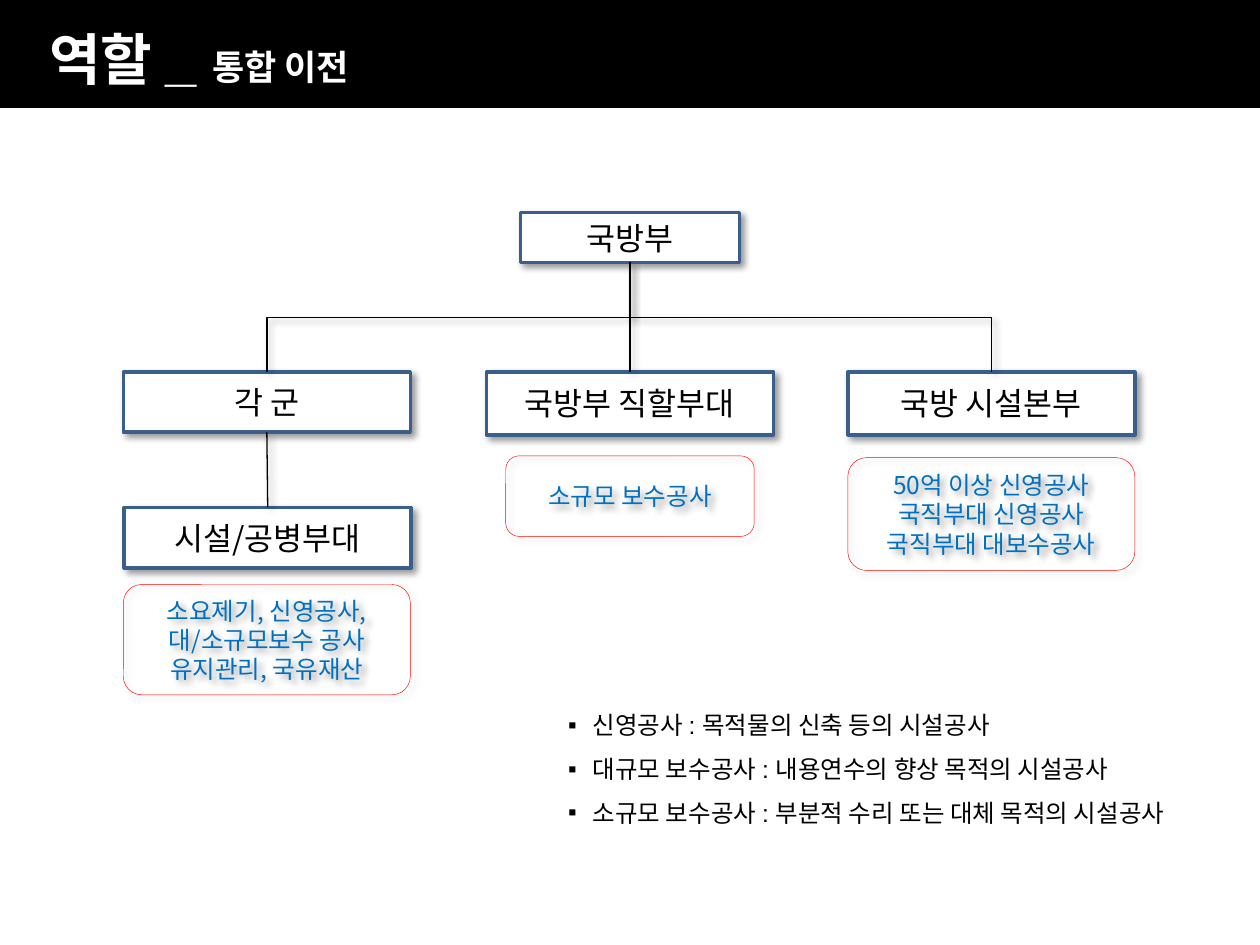
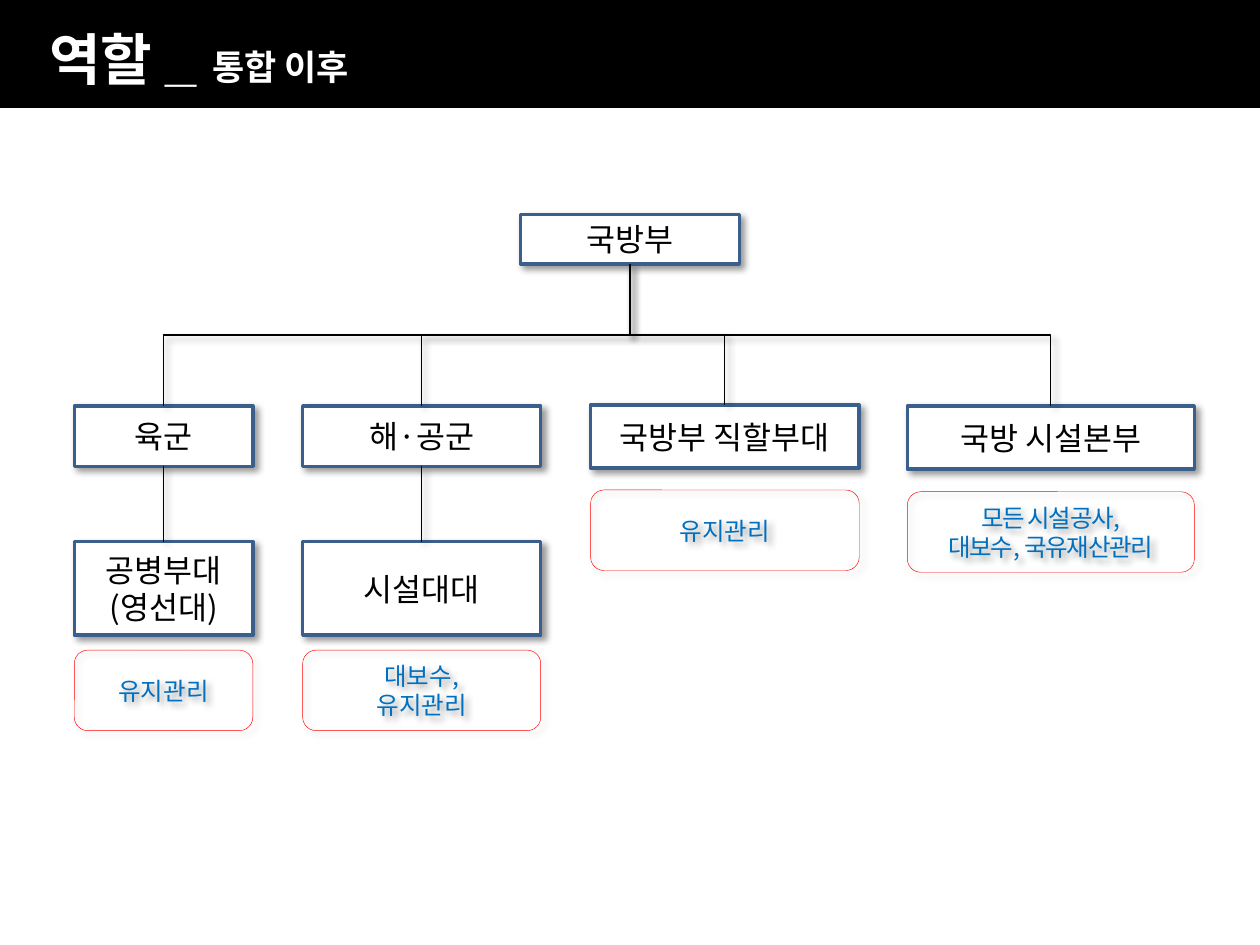
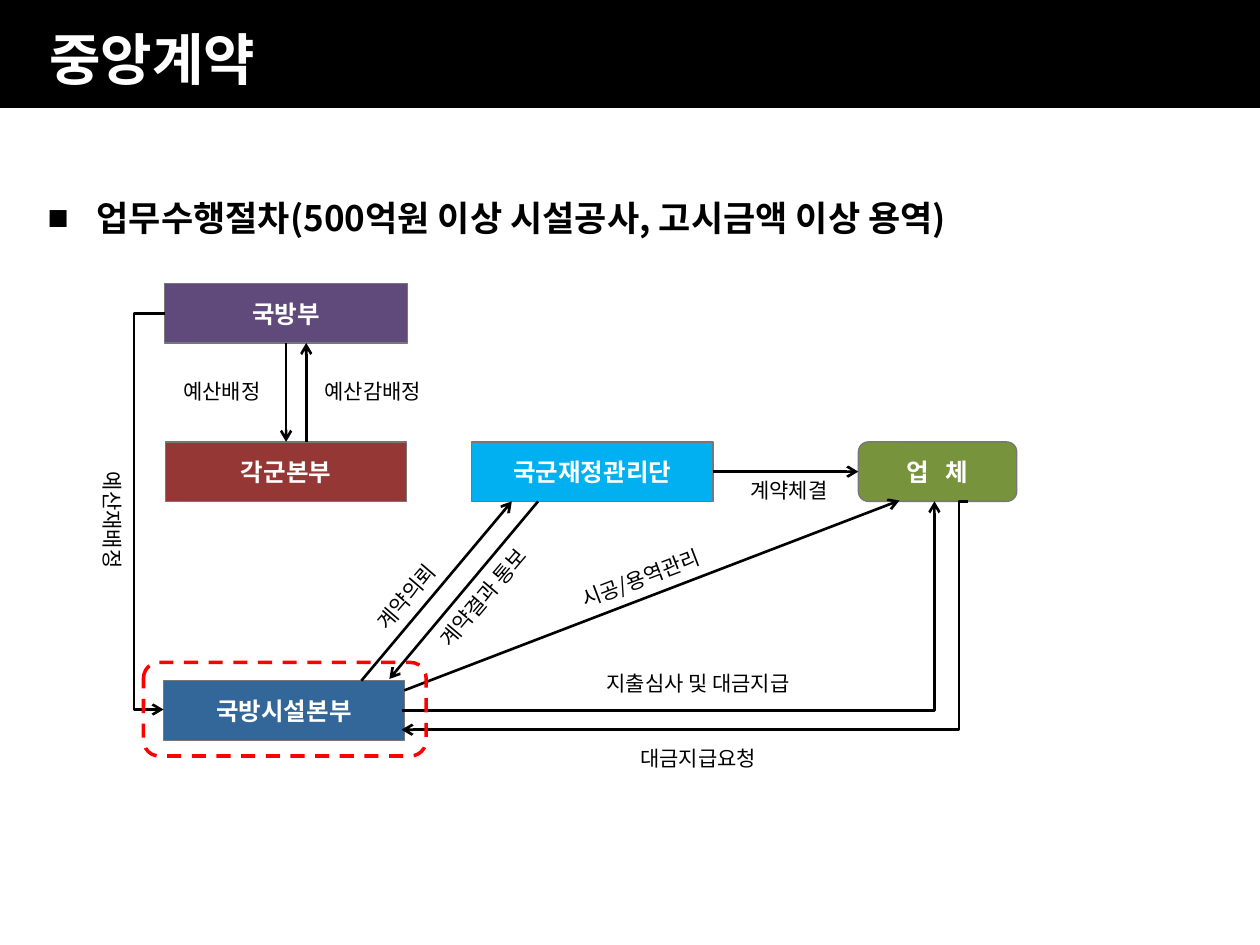
from dataclasses import dataclass

from lxml.etree import SubElement as Sub
from pptx import Presentation
from pptx.dml.color import RGBColor
from pptx.enum.dml import MSO_LINE
from pptx.enum.shapes import MSO_CONNECTOR as Conn, MSO_SHAPE as Geo
from pptx.enum.text import MSO_ANCHOR as Anchor, MSO_AUTO_SIZE as Auto, PP_ALIGN as Align
from pptx.oxml.ns import qn
from pptx.util import Pt

# Shared look
BLACK = RGBColor(0, 0, 0)
WHITE = RGBColor(0xFF, 0xFF, 0xFF)
NAVY = RGBColor(0x3A, 0x5F, 0x8C)
RED = RGBColor(0xFF, 0, 0)
BLUE = RGBColor(0, 0x70, 0xC0)
GRAY = RGBColor(0x77, 0x77, 0x77)
PURPLE = RGBColor(0x60, 0x4A, 0x7B)
STEEL = RGBColor(0x33, 0x66, 0x99)
MAROON = RGBColor(0x95, 0x37, 0x35)
SKY = RGBColor(0, 0xB0, 0xF0)
GREEN = RGBColor(0x77, 0x93, 0x3C)

KOREAN = "Noto Sans CJK KR"
LATIN = "Arial"
WIDE, HIGH = 720, 540
LEAD = 1.2

HEAD = dict(name=LATIN, size=Pt(32), bold=True, color=WHITE)
SUBHEAD = {**HEAD, "size": Pt(20)}
UNIT = dict(name=KOREAN, size=Pt(18), bold=False, color=BLACK)
DUTY = dict(name=KOREAN, size=Pt(14), bold=False, color=BLUE)
TERM = dict(name=LATIN, size=Pt(14), bold=False, color=BLACK)
TOPIC = dict(name=KOREAN, size=Pt(20), bold=True, color=BLACK)
PARTY = dict(name=KOREAN, size=Pt(14), bold=True, color=WHITE)
LABEL = dict(name=KOREAN, size=Pt(12), bold=False, color=BLACK)


@dataclass
class Box:
    text: str
    x: float
    y: float
    w: float
    h: float
    up: int = -1        # index of the unit above
    track: int = 0      # letter spacing, hundredths of a point
    fill: RGBColor = WHITE
    geo: Geo = Geo.RECTANGLE


@dataclass
class Tag:
    text: str
    x: float
    y: float
    w: float
    turn: float = 0


@dataclass
class Flow:
    x1: float
    y1: float
    x2: float
    y2: float


# Text helpers
def style(run, look: dict, track: int = 0) -> None:
    for key, value in look.items():
        if key == "color":
            run.font.color.rgb = value
        else:
            setattr(run.font, key, value)
    props = run.font._element
    Sub(props, qn("a:ea")).set("typeface", KOREAN)
    if track:
        props.set("spc", str(track))


def write(frame, text: str, look: dict, pitch: float = 0, align=Align.CENTER,
          track: int = 0) -> None:
    frame.text = text
    for para in frame.paragraphs:
        para.alignment = align
        para.space_before = Pt(0)
        para.line_spacing = Pt(pitch or look["size"].pt * LEAD)
        for run in para.runs:
            style(run, look, track)


def place(shape, x: float, y: float, w: float, h: float) -> None:
    spots = dict(left=x, top=y, width=w, height=h)
    for key, value in spots.items():
        setattr(shape, key, Pt(value))


def bullets(slide, text: str, look: dict, mark: str, gap: float, pitch: float,
            spot: tuple) -> None:
    body = slide.placeholders[1]
    place(body, *spot)
    body.text_frame.auto_size = Auto.NONE
    write(body.text_frame, text, look, pitch, Align.LEFT)
    for para in body.text_frame.paragraphs:
        props = para._p.get_or_add_pPr()
        props.set("marL", str(Pt(gap)))
        props.set("indent", str(-Pt(gap)))
        Sub(props, qn("a:buFont")).set("typeface", LATIN)
        Sub(props, qn("a:buChar")).set("char", mark)


# Shape and line helpers
def shade(shape) -> None:
    props = shape._element.spPr
    glow = props.find(qn("a:effectLst"))
    cast = Sub(glow, qn("a:outerShdw"), blurRad=str(Pt(4)), dist=str(Pt(3)),
               dir="2700000", algn="tl", rotWithShape="0")
    tint = Sub(cast, qn("a:srgbClr"), val="000000")
    Sub(tint, qn("a:alpha"), val="40000")


def draw(slide, geo: Geo, spot: tuple, fill, edge: RGBColor, weight: float):
    shape = slide.shapes.add_shape(geo, *map(Pt, spot))
    shape.shadow.inherit = False
    if fill is None:
        shape.fill.background()
    else:
        shape.fill.solid()
        shape.fill.fore_color.rgb = fill
    shape.line.color.rgb = edge
    shape.line.width = Pt(weight)
    return shape


def wire(slide, kind: Conn, flow: Flow, weight: float, arrow: bool = False):
    ends = map(Pt, (flow.x1, flow.y1, flow.x2, flow.y2))
    line = slide.shapes.add_connector(kind, *ends)
    Sub(line._element.spPr, qn("a:effectLst"))
    line.line.color.rgb = BLACK
    line.line.width = Pt(weight)
    if arrow:
        Sub(line.line._get_or_add_ln(), qn("a:tailEnd"), type="arrow")
    return line


def join(slide, start, begin: int, end, finish: int, weight: float, arrow: bool = False):
    line = wire(slide, Conn.STRAIGHT, Flow(0, 0, 10, 10), weight, arrow)
    line.begin_connect(start, begin)
    line.end_connect(end, finish)
    return line


def bend(slide, flow: Flow, turn: float):
    """Elbow that runs sideways, turns at x = turn, and ends in an arrow."""
    line = wire(slide, Conn.ELBOW, flow, 1.5, True)
    geom = line._element.spPr.find(qn("a:prstGeom"))
    if turn == flow.x2:
        geom.set("prst", "bentConnector2")
    else:
        share = (turn - flow.x1) / (flow.x2 - flow.x1)
        guide = geom.find(qn("a:avLst"))
        Sub(guide, qn("a:gd"), name="adj1", fmla=f"val {round(share * 100000)}")


def branch(slide, top: Box, low: Box, upper, lower) -> None:
    x1, y1 = top.x + top.w / 2, top.y + top.h
    x2, y2 = low.x + low.w / 2, low.y
    if abs(x1 - x2) < 1:
        line = join(slide, upper, 2, lower, 0, 0.75)
    else:
        # A sideways elbow turned a quarter so that it leaves downward
        mx, my = (x1 + x2) / 2, (y1 + y2) / 2
        dx, dy = (x2 - x1) / 2, (y2 - y1) / 2
        line = wire(slide, Conn.ELBOW, Flow(mx - dy, my + dx, mx + dy, my - dx), 0.75)
        line._element.spPr.find(qn("a:xfrm")).set("rot", "5400000")
    shade(line)


# Slide frames
def start(prs, layout: int, head: str, sub: str = ""):
    slide = prs.slides.add_slide(prs.slide_layouts[layout])
    title = slide.shapes.title
    place(title, 0, 0, WIDE, 66)
    frame = title.text_frame
    frame.auto_size = Auto.NONE
    frame.vertical_anchor = Anchor.MIDDLE
    para = frame.paragraphs[0]
    para.alignment = Align.LEFT
    para._p.get_or_add_pPr().set("marL", str(Pt(21)))
    for text, look in ((head, HEAD), (sub, SUBHEAD)):
        if text:
            run = para.add_run()
            run.text = text
            style(run, look)
    return slide


def band(prs, slide) -> None:
    bar = draw(slide, Geo.RECTANGLE, (0, 0, WIDE, 60.5), BLACK, BLACK, 2)
    bar._element.nvSpPr.cNvPr.set("id", "99")
    prs.slide_master.shapes.element.insert(2, bar._element)


def chart(slide, units: list[Box], duties: list[Box]) -> None:
    shapes = []
    for unit in units:
        shape = draw(slide, unit.geo, (unit.x, unit.y, unit.w, unit.h), unit.fill, NAVY, 2)
        shade(shape)
        shape.text_frame.vertical_anchor = Anchor.MIDDLE
        write(shape.text_frame, unit.text, UNIT)
        shapes.append(shape)
    for unit, shape in zip(units, shapes):
        if unit.up >= 0:
            branch(slide, units[unit.up], unit, shapes[unit.up], shape)
    for duty in duties:
        spot = (duty.x, duty.y, duty.w, duty.h)
        shape = draw(slide, Geo.ROUNDED_RECTANGLE, spot, None, RED, 0.25)
        shade(shape)
        shape.text_frame.vertical_anchor = Anchor.MIDDLE
        write(shape.text_frame, duty.text, DUTY, track=duty.track)


# Slide 1: roles before the merger
def before(prs) -> None:
    slide = start(prs, 1, "역할 _ ", "통합 이전")
    band(prs, slide)
    chart(slide, [
        Box("국방부", 297.5, 121.5, 125, 28.5),
        Box("각 군", 70.5, 212.5, 164, 34.5, 0),
        Box("국방부 직할부대", 278, 212.5, 164, 36, 0),
        Box("국방 시설본부", 484.5, 212.5, 164, 36, 0),
        Box("시설/공병부대", 71, 290, 164, 34.5, 1),
    ], [
        Box("소규모 보수공사", 289, 260.5, 142, 46),
        Box("50억 이상 신영공사\n국직부대 신영공사\n국직부대 대보수공사", 484.5, 261.5, 164, 64.5),
        Box("소요제기, 신영공사,\n대/소규모보수 공사\n유지관리, 국유재산", 70.5, 334, 164, 63),
    ])
    terms = ("신영공사 : 목적물의 신축 등의 시설공사\n"
             "대규모 보수공사 : 내용연수의 향상 목적의 시설공사\n"
             "소규모 보수공사 : 부분적 수리 또는 대체 목적의 시설공사")
    bullets(slide, terms, TERM, "▪", 14, 25, (317.5, 394, 402, 80.5))


# Slide 2: roles after the merger
def after(prs) -> None:
    slide = start(prs, 5, "역할 _ ", "통합 이후")
    chart(slide, [
        Box("국방부", 297.5, 122.5, 125, 28.5),
        Box("육군", 42.5, 232, 102, 34.5, 0),
        Box("해·공군", 173, 232, 136, 34.5, 0),
        Box("국방부 직할부대", 337.5, 231.5, 153.5, 36, 0),
        Box("국방 시설본부", 518.5, 232, 164, 36, 0),
        Box("공병부대\n(영선대)", 42.5, 309.5, 102, 53.5, 1),
        Box("시설대대", 173, 309.5, 136, 53.5, 2),
    ], [
        Box("유지관리", 42.5, 371.5, 102, 46),
        Box("대보수,\n유지관리", 173, 371.5, 136, 46),
        Box("유지관리", 337.5, 280, 153.5, 46),
        Box("모든 시설공사,\n대보수, 국유재산관리", 518.5, 281, 164, 46, track=-80),
    ])


# Slide 3: central contracts
def deals(prs) -> None:
    slide = start(prs, 1, "중앙계약")
    bullets(slide, "업무수행절차(500억원 이상 시설공사, 고시금액 이상 용역)", TOPIC,
            "■", 28, 44, (20, 88.5, 680.5, 402.5))

    # Parties
    shapes = []
    for party in (
        Box("국방부", 94, 162, 139, 34, fill=PURPLE),
        Box("각군본부", 94.5, 252.5, 138, 34, fill=MAROON),
        Box("국군재정관리단", 269.5, 252.5, 138, 34, fill=SKY),
        Box("업 체", 490.5, 252.5, 90.5, 34, track=300, fill=GREEN,
            geo=Geo.ROUNDED_RECTANGLE),
        Box("국방시설본부", 93.5, 389, 137.5, 34, fill=STEEL),
    ):
        shape = draw(slide, party.geo, (party.x, party.y, party.w, party.h),
                     party.fill, GRAY, 0.75)
        shape.text_frame.vertical_anchor = Anchor.MIDDLE
        shape.text_frame.word_wrap = False
        write(shape.text_frame, party.text, PARTY, track=party.track)
        shapes.append(shape)
    ministry, forces, finance, firm, _ = shapes

    # Flows
    join(slide, ministry, 2, forces, 0, 1.5, True)
    join(slide, finance, 3, firm, 1, 1.5, True)
    for flow in (
        Flow(175, 252.5, 175, 196),
        Flow(206.5, 389, 292.5, 286.5),
        Flow(307.5, 286.5, 222.5, 388),
        Flow(231, 394.5, 514, 286),
    ):
        wire(slide, Conn.STRAIGHT, flow, 1.5, True)
    bend(slide, Flow(94.5, 179, 93.5, 405.5), 76.5)
    bend(slide, Flow(553, 286.5, 229.5, 417), 548)
    bend(slide, Flow(229.5, 406, 534, 286.5), 534)

    # Focus frame
    focus = draw(slide, Geo.ROUNDED_RECTANGLE, (82, 378.5, 161.5, 53.5), None, RED, 2)
    focus.line.dash_style = MSO_LINE.DASH

    # Flow labels
    for tag in (
        Tag("대금지급요청", 353.5, 422.5, 91),
        Tag("지출심사 및 대금지급", 329.5, 379.5, 139),
        Tag("계약의뢰", 162.5, 330, 139, 310.8),
        Tag("예산배정", 93, 213, 67.5),
        Tag("예산재배정", 25, 286.5, 79, 90),
        Tag("계약체결", 417, 269.5, 67.5),
        Tag("계약결과 통보", 206.5, 330.5, 139, 310.3),
        Tag("예산감배정", 173.5, 212.5, 79),
        Tag("시공/용역관리", 296.5, 319.5, 139, 339.1),
    ):
        label = slide.shapes.add_textbox(Pt(tag.x), Pt(tag.y), Pt(tag.w), Pt(21.5))
        label.rotation = tag.turn
        label.text_frame.word_wrap = True
        write(label.text_frame, tag.text, LABEL)


def main() -> None:
    prs = Presentation()
    prs.slide_width, prs.slide_height = Pt(WIDE), Pt(HIGH)
    before(prs)
    after(prs)
    deals(prs)
    prs.save("out.pptx")


if __name__ == "__main__":
    main()
